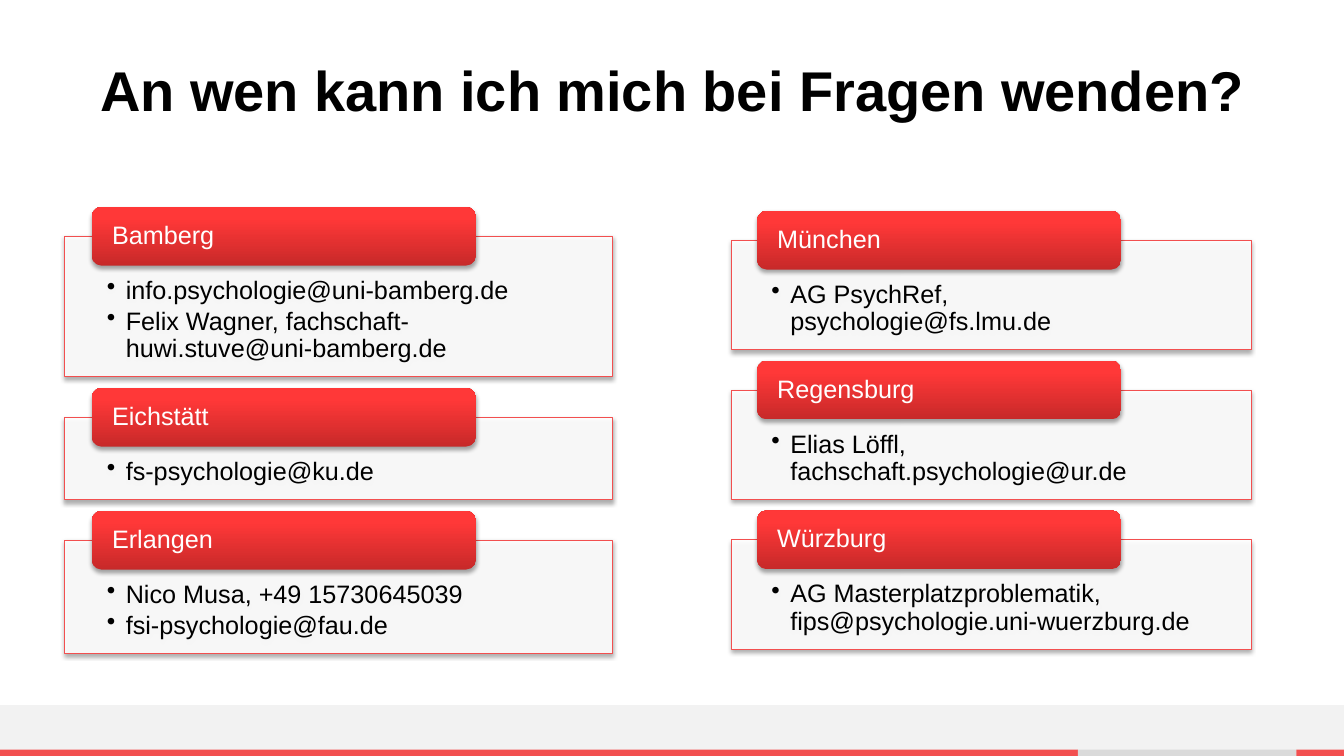
from lxml import etree
from pptx import Presentation
from pptx import util as u
from pptx.dml.color import RGBColor
from pptx.enum import shapes, text
from pptx.oxml import ns

BLACK = RGBColor(0x00, 0x00, 0x00)
WHITE = RGBColor(0xFF, 0xFF, 0xFF)
PALE_GRAY = RGBColor(0xF2, 0xF2, 0xF2)
MID_GRAY = RGBColor(0xDA, 0xDA, 0xDA)
CORAL = RGBColor(0xF2, 0x4F, 0x4F)
RED = RGBColor(0xFF, 0x38, 0x38)
DARK_RED = RGBColor(0xC7, 0x29, 0x29)

SLIDE_WIDTH, SLIDE_HEIGHT = 960, 540
TAB_HEIGHT, TAB_OVERLAP, CARD_GAP = 42, 21, 7.8

TITLE = "An wen kann ich mich bei Fragen wenden?"
LEFT_CARDS = [
    ("Bamberg", 100.5, ["info.psychologie@uni-bamberg.de",
                        "Felix Wagner, fachschaft-huwi.stuve@uni-bamberg.de"]),
    ("Eichstätt", 59, ["fs-psychologie@ku.de"]),
    ("Erlangen", 80.7, ["Nico Musa, +49 15730645039", "fsi-psychologie@fau.de"]),
]
RIGHT_CARDS = [
    ("München", 78.2, ["AG PsychRef, psychologie@fs.lmu.de"]),
    ("Regensburg", 78.2, ["Elias Löffl, fachschaft.psychologie@ur.de"]),
    ("Würzburg", 78.2, ["AG Masterplatzproblematik, fips@psychologie.uni-wuerzburg.de"]),
]


def apply_format(target, values):
    """Set each named attribute of the target."""
    for name, value in values.items():
        setattr(target, name, value)


def add_child(parent, tag, **attributes):
    """Append a DrawingML element and return it."""
    return etree.SubElement(parent, ns.qn(tag), attributes)


def add_box(slide, kind, left, top, width, height, color):
    """Add a solid shape without line or shadow."""
    shape = slide.shapes.add_shape(kind, u.Pt(left), u.Pt(top), u.Pt(width), u.Pt(height))
    shape.fill.solid()
    shape.fill.fore_color.rgb = color
    shape.line.fill.background()
    shape.shadow.inherit = False
    return shape


def add_shadow(shape):
    """Give the shape a soft shadow below it."""
    effects = shape._element.spPr.find(ns.qn("a:effectLst"))
    shadow = add_child(effects, "a:outerShdw", blurRad=str(u.Pt(3.1)), dist=str(u.Pt(1.8)),
                       dir="5400000", rotWithShape="0")
    color = add_child(shadow, "a:srgbClr", val=str(BLACK))
    add_child(color, "a:alpha", val="35000")


def set_frame(shape, anchor, side=0, top=0, bottom=0):
    """Set wrapping, anchor and insets of the text."""
    apply_format(shape.text_frame, {
        "word_wrap": True, "auto_size": text.MSO_AUTO_SIZE.NONE, "vertical_anchor": anchor,
        "margin_left": u.Pt(side), "margin_right": u.Pt(side),
        "margin_top": u.Pt(top), "margin_bottom": u.Pt(bottom)})


def write_paragraph(paragraph, words, size, color, alignment=text.PP_ALIGN.LEFT,
                    bold=False, bullet=False):
    """Write one formatted paragraph, with a bullet if asked."""
    if bullet:
        properties = paragraph._p.get_or_add_pPr()
        apply_format(paragraph, {"space_after": u.Pt(2.7)})
        properties.set("marL", str(u.Pt(13.5)))
        properties.set("indent", str(u.Pt(-13.5)))
        add_child(properties, "a:buChar", char="•")
    apply_format(paragraph, {"alignment": alignment, "line_spacing": 0.9})
    run = paragraph.add_run()
    run.text = words
    apply_format(run.font, {"name": "Arial", "size": u.Pt(size), "bold": bold})
    run.font.color.rgb = color


def add_backdrop(slide, width, height):
    """Add the white page area and the coloured strip at the foot."""
    slide.background.fill.solid()
    slide.background.fill.fore_color.rgb = PALE_GRAY
    rectangle = shapes.MSO_SHAPE.RECTANGLE
    add_box(slide, rectangle, 0, 0, width, height - 36.5, WHITE)
    strip_height = 4.5
    edges = [0, 770, 926, width]
    for left, right, color in zip(edges, edges[1:], [CORAL, MID_GRAY, CORAL]):
        add_box(slide, rectangle, left, height - strip_height, right - left, strip_height, color)


def add_title(slide, left, top, width, height):
    """Place and format the title above the backdrop."""
    title = slide.shapes.title
    slide.shapes._spTree.append(title._element)
    apply_format(title, {"left": u.Pt(left), "top": u.Pt(top),
                         "width": u.Pt(width), "height": u.Pt(height)})
    set_frame(title, text.MSO_ANCHOR.MIDDLE)
    write_paragraph(title.text_frame.paragraphs[0], TITLE, 40, BLACK,
                    text.PP_ALIGN.CENTER, bold=True)


def add_card(slide, left, top, width, height, city, contacts):
    """Add a contact panel with a city tab across its top edge."""
    panel = add_box(slide, shapes.MSO_SHAPE.RECTANGLE, left, top + TAB_OVERLAP,
                    width, height, WHITE)
    fill_color = panel._element.spPr.find(ns.qn("a:solidFill"))[0]
    add_child(fill_color, "a:alpha", val="90000")
    panel.line.color.rgb = CORAL
    panel.line.width = u.Pt(0.75)
    add_shadow(panel)
    set_frame(panel, text.MSO_ANCHOR.TOP, side=width * 0.0776, top=29.5, bottom=10)
    for index, contact in enumerate(contacts):
        frame = panel.text_frame
        paragraph = frame.add_paragraph() if index else frame.paragraphs[0]
        write_paragraph(paragraph, contact, 18, BLACK, bullet=True)

    tab = add_box(slide, shapes.MSO_SHAPE.ROUNDED_RECTANGLE, left + width * 0.05, top,
                  width * 0.7, TAB_HEIGHT, RED)
    tab.fill.gradient()
    tab.fill.gradient_angle = 90
    for stop, position, color in zip(tab.fill.gradient_stops, [0, 0.8], [DARK_RED, RED]):
        stop.position = position
        stop.color.rgb = color
    add_shadow(tab)
    set_frame(tab, text.MSO_ANCHOR.MIDDLE, side=12.4)
    write_paragraph(tab.text_frame.paragraphs[0], city, 18, WHITE)


def add_card_column(slide, left, top, width, cards):
    """Stack cards downwards with equal gaps."""
    for city, height, contacts in cards:
        add_card(slide, left, top, width, height, city, contacts)
        top += TAB_OVERLAP + height + CARD_GAP


def main():
    """Build and save the contact slide."""
    presentation = Presentation()
    apply_format(presentation, {"slide_width": u.Pt(SLIDE_WIDTH),
                                "slide_height": u.Pt(SLIDE_HEIGHT)})
    slide = presentation.slides.add_slide(presentation.slide_layouts.get_by_name("Title Only"))
    add_backdrop(slide, SLIDE_WIDTH, SLIDE_HEIGHT)
    add_title(slide, 48, 21.6, 864, 90)
    add_card_column(slide, 46, 147.8, 391.7, LEFT_CARDS)
    add_card_column(slide, 522.2, 150.6, 371.5, RIGHT_CARDS)
    presentation.save("out.pptx")


if __name__ == "__main__":
    main()
